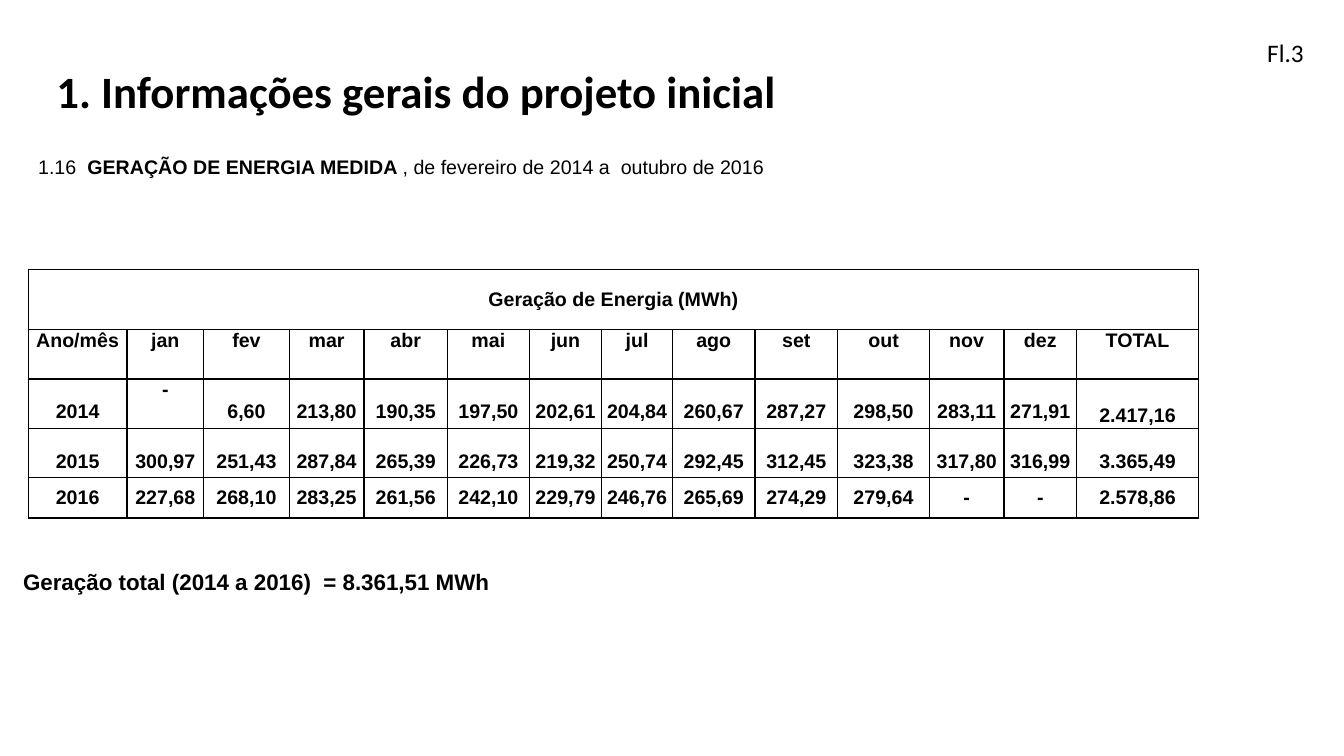
from dataclasses import dataclass

from lxml.etree import SubElement
from pptx import Presentation
from pptx.dml.color import RGBColor
from pptx.enum.text import MSO_ANCHOR as Anchor, MSO_AUTO_SIZE as AutoSize, PP_ALIGN as Align
from pptx.oxml.ns import qn
from pptx.slide import Slide
from pptx.table import _Cell as Cell
from pptx.text.text import TextFrame
from pptx.util import Inches, Pt


@dataclass(frozen=True)
class Theme:
    ink: str = "000000"
    heading_font: str = "Calibri"
    body_font: str = "Arial"
    title: int = 32
    page: int = 18
    total: int = 16
    body: int = 14
    border: int = 1


@dataclass(frozen=True)
class Run:
    text: str
    bold: bool = False


@dataclass(frozen=True)
class Label:
    box: tuple[float, float, float, float]
    runs: tuple[Run, ...]
    size: int
    font: str


@dataclass(frozen=True)
class Row:
    height: float
    values: str
    anchor: Anchor = Anchor.TOP
    top: float = 0


THEME = Theme()
TITLE_BOX = (0.46, 0.21, 11.5, 1.45)
TABLE_ORIGIN = (0.28, 2.67)
TABLE_TITLE = "Geração de Energia (MWh)"
COLUMNS = (0.98, 0.76, 0.85, 0.74, 0.83, 0.81, 0.72, 0.7, 0.82, 0.82, 0.91, 0.74, 0.72, 1.21)
ROWS = (
    Row(0.6, "", Anchor.MIDDLE),
    Row(0.49, "Ano/mês jan fev mar abr mai jun jul ago set out nov dez TOTAL"),
    Row(0.49, "2014 - 6,60 213,80 190,35 197,50 202,61 204,84 260,67 287,27 298,50 "
              "283,11 271,91 2.417,16", top=0.22),
    Row(0.49, "2015 300,97 251,43 287,84 265,39 226,73 219,32 250,74 292,45 312,45 323,38 "
              "317,80 316,99 3.365,49", top=0.22),
    Row(0.4, "2016 227,68 268,10 283,25 261,56 242,10 229,79 246,76 265,69 274,29 279,64 "
             "- - 2.578,86", Anchor.MIDDLE),
)
# Cells of the 2014 row that sit higher or lower than their neighbours
TOP_MARGINS = {(2, 1): 0, (2, 13): 0.25}
LABELS = (
    Label((0.13, 5.59, 6.21, 0.37),
          (Run("Geração total (2014 a 2016)  = 8.361,51 MWh", True),),
          THEME.total, THEME.body_font),
    Label((0.28, 1.49, 10.86, 0.34),
          (Run("1.16 "), Run(" GERAÇÃO DE ENERGIA MEDIDA ", True),
           Run(", de fevereiro de 2014 a  outubro de 2016")),
          THEME.body, THEME.body_font),
    Label((12.47, 0.32, 0.81, 0.4), (Run("Fl.3"),), THEME.page, THEME.heading_font),
)


def write(tf: TextFrame, *runs: Run, size: int = THEME.body, font: str = THEME.body_font,
          align: Align = Align.LEFT, spacing: float = 1.0) -> None:
    p = tf.paragraphs[0]
    p.alignment = align
    p.line_spacing = spacing
    for run in runs:
        r = p.add_run()
        r.text = run.text
        r.font.name = font
        r.font.size = Pt(size)
        r.font.bold = run.bold
        r.font.color.rgb = RGBColor.from_string(THEME.ink)


def add_title(s: Slide) -> None:
    sp = s.shapes.title
    sp.left, sp.top, sp.width, sp.height = map(Inches, TITLE_BOX)
    tf = sp.text_frame
    tf.auto_size = AutoSize.NONE
    tf.vertical_anchor = Anchor.MIDDLE
    write(tf, Run("1. Informações gerais do projeto inicial", True),
          size=THEME.title, font=THEME.heading_font, spacing=0.9)


def add_label(s: Slide, label: Label) -> None:
    tf = s.shapes.add_textbox(*map(Inches, label.box)).text_frame
    tf.word_wrap = True
    tf.auto_size = AutoSize.SHAPE_TO_FIT_TEXT
    write(tf, *label.runs, size=label.size, font=label.font)


def add_borders(cell: Cell) -> None:
    """Rule all four sides; the lines must come before the fill in tcPr."""
    tc_pr = cell._tc.get_or_add_tcPr()
    for i, side in enumerate(("lnL", "lnR", "lnT", "lnB")):
        ln = SubElement(tc_pr, qn(f"a:{side}"), w=str(Pt(THEME.border)))
        SubElement(SubElement(ln, qn("a:solidFill")), qn("a:srgbClr"), val=THEME.ink)
        tc_pr.insert(i, ln)


def format_cell(cell: Cell, anchor: Anchor, top: float) -> None:
    cell.fill.background()
    cell.margin_left = cell.margin_right = cell.margin_bottom = 0
    cell.margin_top = Inches(top)
    cell.vertical_anchor = anchor
    add_borders(cell)


def add_energy_table(s: Slide) -> None:
    size = (sum(COLUMNS), sum(row.height for row in ROWS))
    table = s.shapes.add_table(len(ROWS), len(COLUMNS),
                               *map(Inches, TABLE_ORIGIN + size)).table
    table.first_row = table.horz_banding = False
    for column, width in zip(table.columns, COLUMNS):
        column.width = Inches(width)
    table.cell(0, 0).merge(table.cell(0, len(COLUMNS) - 1))
    for i, row in enumerate(ROWS):
        table.rows[i].height = Inches(row.height)
        for j in range(len(COLUMNS)):
            format_cell(table.cell(i, j), row.anchor, TOP_MARGINS.get((i, j), row.top))
        for j, value in enumerate(row.values.split() or [TABLE_TITLE]):
            write(table.cell(i, j).text_frame, Run(value, True), align=Align.CENTER)


def main() -> None:
    prs = Presentation()
    prs.slide_width, prs.slide_height = Inches(13.33), Inches(7.5)
    s = prs.slides.add_slide(prs.slide_layouts.get_by_name("Title Only"))
    add_title(s)
    add_energy_table(s)
    for label in LABELS:
        add_label(s, label)
    prs.save("out.pptx")


if __name__ == "__main__":
    main()
